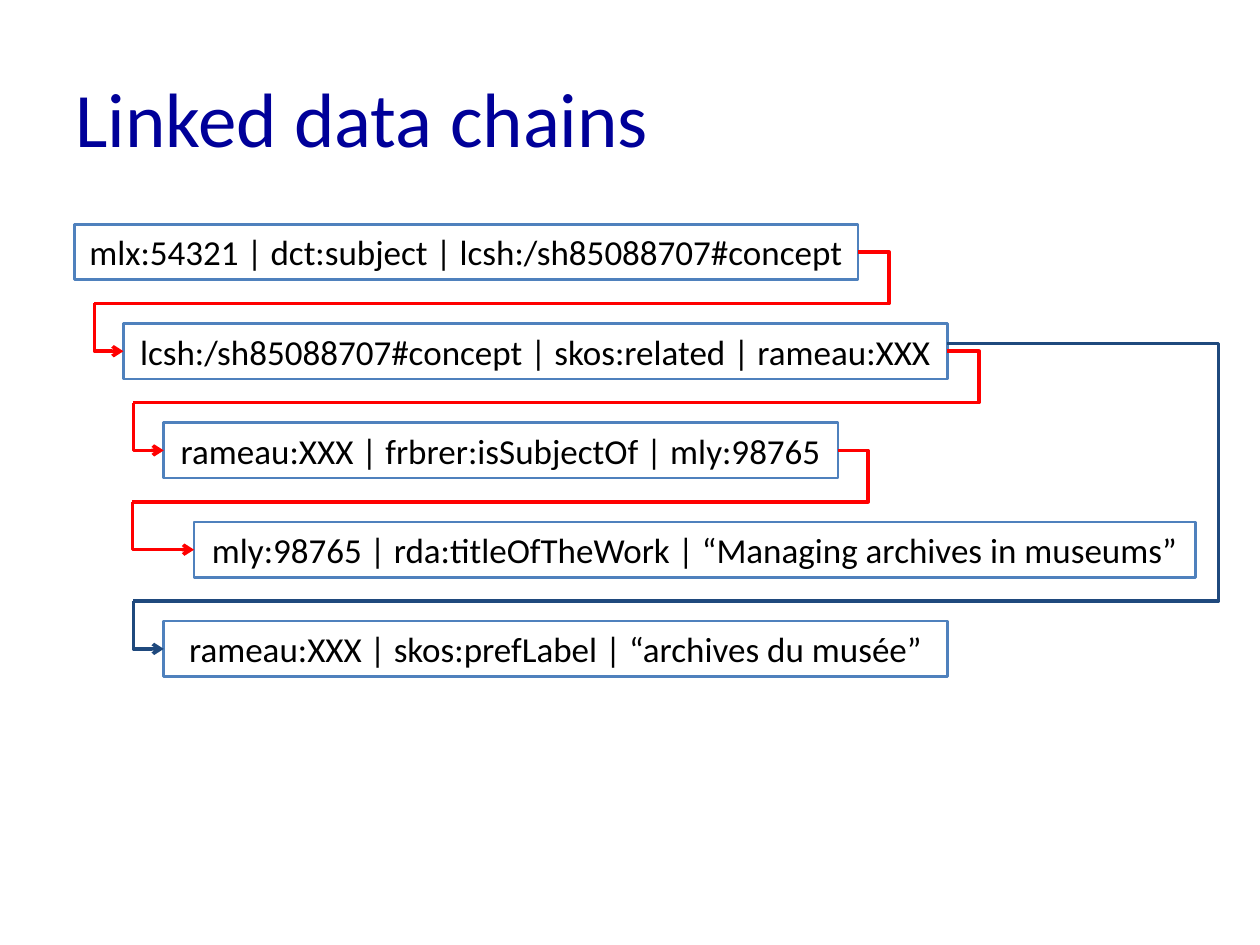
from dataclasses import dataclass

from lxml import etree
from pptx import Presentation
from pptx.dml.color import RGBColor
from pptx.enum.shapes import MSO_CONNECTOR, MSO_SHAPE
from pptx.enum.text import MSO_ANCHOR, PP_ALIGN
from pptx.oxml.ns import qn
from pptx.slide import Slide
from pptx.text.text import TextFrame
from pptx.util import Inches, Pt

ELBOW = MSO_CONNECTOR.ELBOW
RECTANGLE = MSO_SHAPE.RECTANGLE
MIDDLE = MSO_ANCHOR.MIDDLE
LEFT, CENTER = PP_ALIGN.LEFT, PP_ALIGN.CENTER

WIDTH, HEIGHT = 10, 7.5
COLUMN = WIDTH / 100
FIRST_TOP, ROW_STEP, BOX_HEIGHT = 1.78, 0.7875, 0.44
LANE_GAP = 0.16
FONT = "Calibri"
COLORS = {
    "title": "000099",
    "text": "000000",
    "border": "4F81BD",
    "chain": "FF0000",
    "label": "1F497D",
}


@dataclass(frozen=True)
class Triple:
    row: int
    column: float
    columns: float
    text: str

    @property
    def left(self) -> float:
        return self.column * COLUMN

    @property
    def right(self) -> float:
        return (self.column + self.columns) * COLUMN

    @property
    def top(self) -> float:
        return FIRST_TOP + self.row * ROW_STEP

    @property
    def middle(self) -> float:
        return self.top + BOX_HEIGHT / 2


@dataclass(frozen=True)
class Link:
    source: int
    target: int
    turn_column: float
    lane_column: float
    color: str
    rise: float = 0


TRIPLES = [
    Triple(0, 5.9, 62.2, "mlx:54321 | dct:subject | lcsh:/sh85088707#concept"),
    Triple(1, 9.8, 65.4, "lcsh:/sh85088707#concept | skos:related | rameau:XXX"),
    Triple(2, 13, 53.5, "rameau:XXX | frbrer:isSubjectOf | mly:98765"),
    Triple(3, 15.4, 79.5, "mly:98765 | rda:titleOfTheWork | “Managing archives in museums”"),
    Triple(4, 13, 62.2, "rameau:XXX | skos:prefLabel | “archives du musée”"),
]
LINKS = [
    Link(0, 1, 70.6, 7.5, "chain"),
    Link(1, 2, 77.7, 10.6, "chain"),
    Link(2, 3, 68.9, 10.5, "chain"),
    Link(1, 4, 96.7, 10.6, "label", 0.06),
]


def write_text(frame: TextFrame, text: str, size: int, color: str, align: PP_ALIGN) -> None:
    frame.word_wrap = True
    frame.vertical_anchor = MIDDLE
    para = frame.paragraphs[0]
    para.alignment = align
    span = para.add_run()
    span.text = text
    span.font.name = FONT
    span.font.size = Pt(size)
    span.font.color.rgb = RGBColor.from_string(COLORS[color])


def draw_title(page: Slide, text: str) -> None:
    box = page.shapes.add_textbox(
        Inches(0.05 * WIDTH), Inches(0.04 * HEIGHT), Inches(0.9 * WIDTH), Inches(HEIGHT / 6)
    )
    write_text(box.text_frame, text, 44, "title", LEFT)


def draw_triple(page: Slide, triple: Triple) -> None:
    box = page.shapes.add_shape(
        RECTANGLE,
        Inches(triple.left),
        Inches(triple.top),
        Inches(triple.columns * COLUMN),
        Inches(BOX_HEIGHT),
    )
    box.shadow.inherit = False
    box.fill.background()
    box.line.color.rgb = RGBColor.from_string(COLORS["border"])
    box.line.width = Pt(1.5)
    write_text(box.text_frame, triple.text, 20, "text", CENTER)


def draw_elbow(
    page: Slide,
    start: tuple[float, float],
    end: tuple[float, float],
    turn: float,
    color: str,
    arrow: bool = False,
) -> None:
    elbow = page.shapes.add_connector(ELBOW, *(Inches(value) for value in start + end))
    elbow.line.color.rgb = RGBColor.from_string(COLORS[color])
    elbow.line.width = Pt(2)
    properties = elbow._element.spPr
    guides = properties.find(qn("a:prstGeom")).get_or_add_avLst()
    share = round((turn - start[0]) / (end[0] - start[0]) * 100000)
    etree.SubElement(guides, qn("a:gd"), name="adj1", fmla=f"val {share}")
    if arrow:
        etree.SubElement(properties.find(qn("a:ln")), qn("a:tailEnd"), type="arrow")
    etree.SubElement(properties, qn("a:effectLst"))


def draw_link(page: Slide, link: Link) -> None:
    source, target = TRIPLES[link.source], TRIPLES[link.target]
    lane_left = link.lane_column * COLUMN
    corner = (lane_left, target.top - LANE_GAP)
    start = (source.right, source.middle - link.rise)
    draw_elbow(page, start, corner, link.turn_column * COLUMN, link.color)
    draw_elbow(page, corner, (target.left, target.middle), lane_left, link.color, arrow=True)


def main() -> None:
    deck = Presentation()
    deck.slide_width, deck.slide_height = Inches(WIDTH), Inches(HEIGHT)
    page = deck.slides.add_slide(deck.slide_layouts[6])
    draw_title(page, "Linked data chains")
    for triple in TRIPLES:
        draw_triple(page, triple)
    for link in LINKS:
        draw_link(page, link)
    deck.save("out.pptx")


if __name__ == "__main__":
    main()
